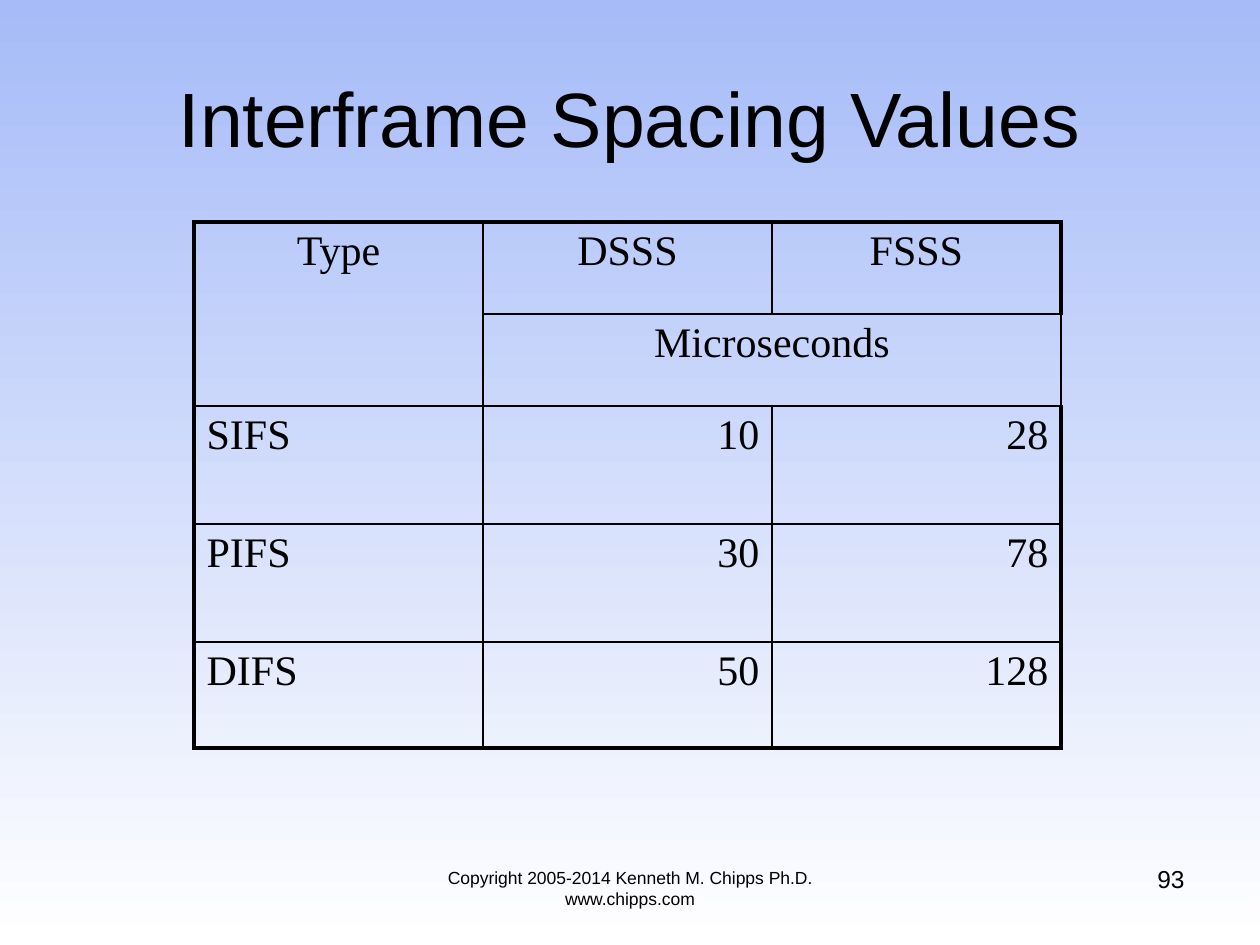
from lxml import etree
from pptx import Presentation
from pptx import util as u
from pptx.dml.color import RGBColor
from pptx.enum import text
from pptx.oxml import ns

SCALE = 914400 / 126  # EMU per px
BLACK = RGBColor(0x00, 0x00, 0x00)
SKY = RGBColor(0xA6, 0xBB, 0xF8)
WHITE = RGBColor(0xFF, 0xFF, 0xFF)
LEFT, CENTER, RIGHT = text.PP_ALIGN.LEFT, text.PP_ALIGN.CENTER, text.PP_ALIGN.RIGHT
THIN, THICK = u.Pt(1), u.Pt(2.25)


def px(*lengths):
    return [u.Emu(round(length * SCALE)) for length in lengths]


def write(frame, words, font, size, align):
    frame.text = words
    para = frame.paragraphs[0]
    para.alignment = align
    for span in para.runs:
        span.font.name = font
        span.font.size = u.Pt(size)
        span.font.color.rgb = BLACK


deck = Presentation()
deck.slide_width, deck.slide_height = px(1260, 945)
page = deck.slides.add_slide(deck.slide_layouts[6])

# Background gradient, from top to bottom
fill = page.background.fill
fill.gradient()
fill.gradient_angle = 270
for stop, color in zip(fill.gradient_stops, (SKY, WHITE)):
    stop.color.rgb = color

# Title, page number and footer
labels = [
    ((63, 38, 1134, 158), "Interframe Spacing Values", 44, CENTER, text.MSO_ANCHOR.MIDDLE),
    ((903, 858, 294, 66), "93", 14, RIGHT, text.MSO_ANCHOR.TOP),
    ((378, 861, 504, 66), "Copyright 2005-2014 Kenneth M. Chipps Ph.D. www.chipps.com",
     10, CENTER, text.MSO_ANCHOR.TOP),
]
for place, words, size, align, anchor in labels:
    box = page.shapes.add_textbox(*px(*place))
    box.text_frame.word_wrap = True
    box.text_frame.vertical_anchor = anchor
    write(box.text_frame, words, "Arial", size, align)

# Table of spacing values
rows = [
    ("Type", "DSSS", "FSSS"),
    ("", "Microseconds", ""),
    ("SIFS", "10", "28"),
    ("PIFS", "30", "78"),
    ("DIFS", "50", "128"),
]
row_heights = px(92, 92, 118, 118, 106)
column_count = len(rows[0])
table = page.shapes.add_table(
    len(rows), column_count, *px(194, 222, 867, 526)).table
table.first_row = table.horz_banding = False
for column in table.columns:
    column.width = px(289)[0]
for row, height in zip(table.rows, row_heights):
    row.height = height
table.cell(0, 0).merge(table.cell(1, 0))
table.cell(1, 1).merge(table.cell(1, 2))

for r, values in enumerate(rows):
    for c, value in enumerate(values):
        cell = table.cell(r, c)
        if value:
            align = CENTER if r < 2 else LEFT if c == 0 else RIGHT
            write(cell.text_frame, value, "Times New Roman", 24, align)

        # Thick outer frame, thin inner lines
        outer = {"a:lnL": c == 0, "a:lnR": c == column_count - 1,
                 "a:lnT": r == 0, "a:lnB": r == len(rows) - 1}
        props = cell._tc.get_or_add_tcPr()
        for tag, is_outer in outer.items():
            line = etree.SubElement(props, ns.qn(tag), w=str(THICK if is_outer else THIN))
            solid = etree.SubElement(line, ns.qn("a:solidFill"))
            etree.SubElement(solid, ns.qn("a:srgbClr"), val=str(BLACK))
        cell.fill.background()

deck.save("out.pptx")
